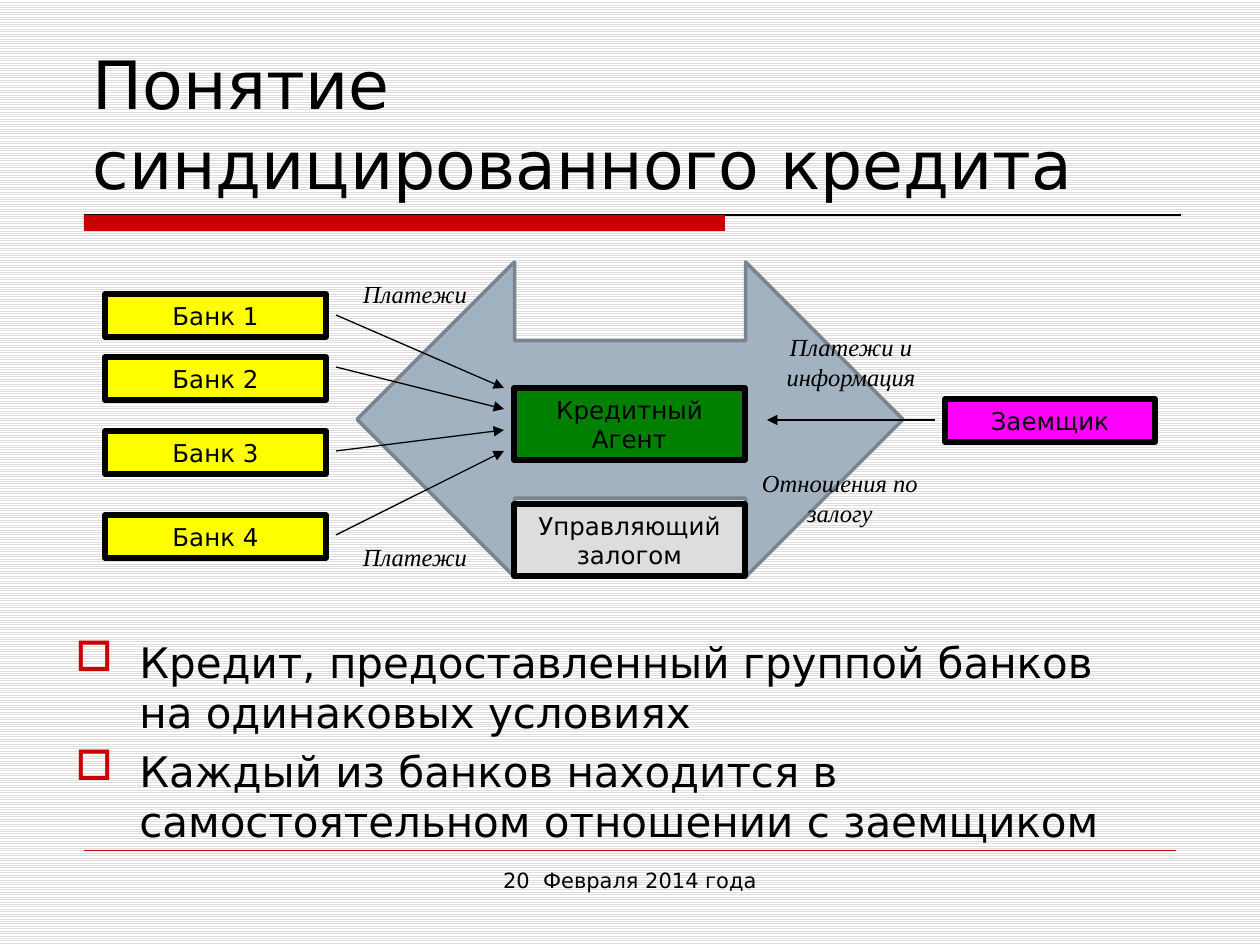
from lxml.etree import SubElement
from pptx import Presentation
from pptx.dml.color import RGBColor
from pptx.enum.dml import MSO_PATTERN
from pptx.enum.shapes import MSO_CONNECTOR, MSO_SHAPE
from pptx.enum.text import MSO_ANCHOR, MSO_AUTO_SIZE, PP_ALIGN
from pptx.oxml.ns import qn
from pptx.util import Emu, Pt

BLACK = RGBColor(0x00, 0x00, 0x00)
WHITE = RGBColor(0xFF, 0xFF, 0xFF)
LIGHT_GREY = RGBColor(0xDD, 0xDD, 0xDD)
RED = RGBColor(0xCC, 0x00, 0x00)
YELLOW = RGBColor(0xFF, 0xFF, 0x00)
GREEN = RGBColor(0x00, 0x80, 0x00)
MAGENTA = RGBColor(0xFF, 0x00, 0xFF)
STEEL = RGBColor(0xA3, 0xB2, 0xC1)
STEEL_EDGE = RGBColor(0x79, 0x84, 0x8F)

SANS = "DejaVu Sans"
SERIF = "Times New Roman"
PX_PER_INCH = 126


def px(length):
    return Emu(round(length * 914400 / PX_PER_INCH))


class SlideBuilder:
    """Draws styled elements on one slide, with lengths in px."""

    def __init__(self, slide):
        self.slide = slide
        self.shapes = slide.shapes

    def background(self):
        fill = self.slide.background.fill
        fill.patterned()
        fill.pattern = MSO_PATTERN.LIGHT_HORIZONTAL
        fill.fore_color.rgb = LIGHT_GREY
        fill.back_color.rgb = WHITE

    def set_text(self, frame, text, size, font=SANS, align=PP_ALIGN.CENTER, italic=False):
        frame.text = text
        frame.word_wrap = True
        frame.auto_size = MSO_AUTO_SIZE.NONE
        for paragraph in frame.paragraphs:
            paragraph.alignment = align
            for run in paragraph.runs:
                run.font.size = Pt(size)
                run.font.name = font
                run.font.italic = italic
                run.font.color.rgb = BLACK

    def title(self, text, left, top, width, height):
        heading = self.shapes.title
        heading.left, heading.top = px(left), px(top)
        heading.width, heading.height = px(width), px(height)
        self.set_text(heading.text_frame, text, 38, align=PP_ALIGN.LEFT)
        heading.text_frame.vertical_anchor = MSO_ANCHOR.BOTTOM

    def label(self, text, left, top, width, height, size=14, **style):
        box = self.shapes.add_textbox(px(left), px(top), px(width), px(height))
        self.set_text(box.text_frame, text, size, **style)
        return box.text_frame

    def bullets(self, items, left, top, width, height):
        frame = self.label("\n".join(items), left, top, width, height,
                           size=24, align=PP_ALIGN.LEFT)
        for paragraph in frame.paragraphs:
            paragraph.space_before = Pt(4.8)
            properties = paragraph._p.get_or_add_pPr()
            properties.set("marL", str(px(64)))
            properties.set("indent", str(-px(64)))
            color = SubElement(properties, qn("a:buClr"))
            SubElement(color, qn("a:srgbClr"), val=str(RED))
            SubElement(properties, qn("a:buChar"), char="□")

    def shape(self, kind, left, top, width, height, fill, edge=None, weight=0):
        shape = self.shapes.add_shape(kind, px(left), px(top), px(width), px(height))
        shape.shadow.inherit = False
        shape.fill.solid()
        shape.fill.fore_color.rgb = fill
        if edge is None:
            shape.line.fill.background()
        else:
            shape.line.color.rgb = edge
            shape.line.width = Pt(weight)
        return shape

    def party(self, text, left, top, width, height, fill):
        """Draws a bordered box for one participant of the loan."""
        box = self.shape(MSO_SHAPE.RECTANGLE, left, top, width, height, fill, BLACK, 3)
        self.set_text(box.text_frame, text, 14)
        box.text_frame.vertical_anchor = MSO_ANCHOR.MIDDLE

    def line(self, start, end, color=BLACK, weight=0.75, arrow=False):
        connector = self.shapes.add_connector(
            MSO_CONNECTOR.STRAIGHT, *(px(value) for value in (*start, *end)))
        connector.line.color.rgb = color
        connector.line.width = Pt(weight)
        properties = connector._element.spPr
        if arrow:
            SubElement(properties.get_or_add_ln(), qn("a:tailEnd"), type="triangle")
        SubElement(properties, qn("a:effectLst"))


def main():
    deck = Presentation()
    deck.slide_width, deck.slide_height = px(1260), px(945)
    page = SlideBuilder(deck.slides.add_slide(deck.slide_layouts[5]))

    page.background()
    page.line((84, 215), (1181, 215))
    page.shape(MSO_SHAPE.RECTANGLE, 84, 215, 641, 16, RED)
    page.line((84, 850), (1176, 850), RED, 0.25)
    page.shape(MSO_SHAPE.LEFT_RIGHT_ARROW, 357, 262, 546, 315, STEEL, STEEL_EDGE, 2)

    page.title("Понятие \vсиндицированного кредита", 80, 42, 1102, 167)
    page.label("20  Февраля 2014 года", 430, 861, 400, 65, size=12)
    page.bullets(["Кредит, предоставленный группой банков на одинаковых условиях",
                  "Каждый из банков находится в самостоятельном отношении с заемщиком"],
                 63, 630, 1108, 179)

    page.party("Кредитный Агент", 514, 388, 231, 72, GREEN)
    page.party("Управляющий залогом", 514, 504, 231, 72, LIGHT_GREY)
    page.party("Заемщик", 945, 399, 210, 43, MAGENTA)
    page.line((935, 420), (767, 420), arrow=True)

    banks = [(294, 315), (357, 367), (431, 451), (515, 535)]
    for index, (box_top, arrow_start) in enumerate(banks):
        page.party(f"Банк {index + 1}", 105, box_top, 221, 43, YELLOW)
        page.line((336, arrow_start), (504, 388 + 21 * index), arrow=True)

    flows = [("Платежи", 336, 273, 158, 43),
             ("Платежи", 336, 536, 158, 43),
             ("Платежи и информация", 746, 326, 210, 72),
             ("Отношения по залогу", 714, 462, 252, 72)]
    for text, *place in flows:
        page.label(text, *place, font=SERIF, italic=True)

    deck.save("out.pptx")


if __name__ == "__main__":
    main()
